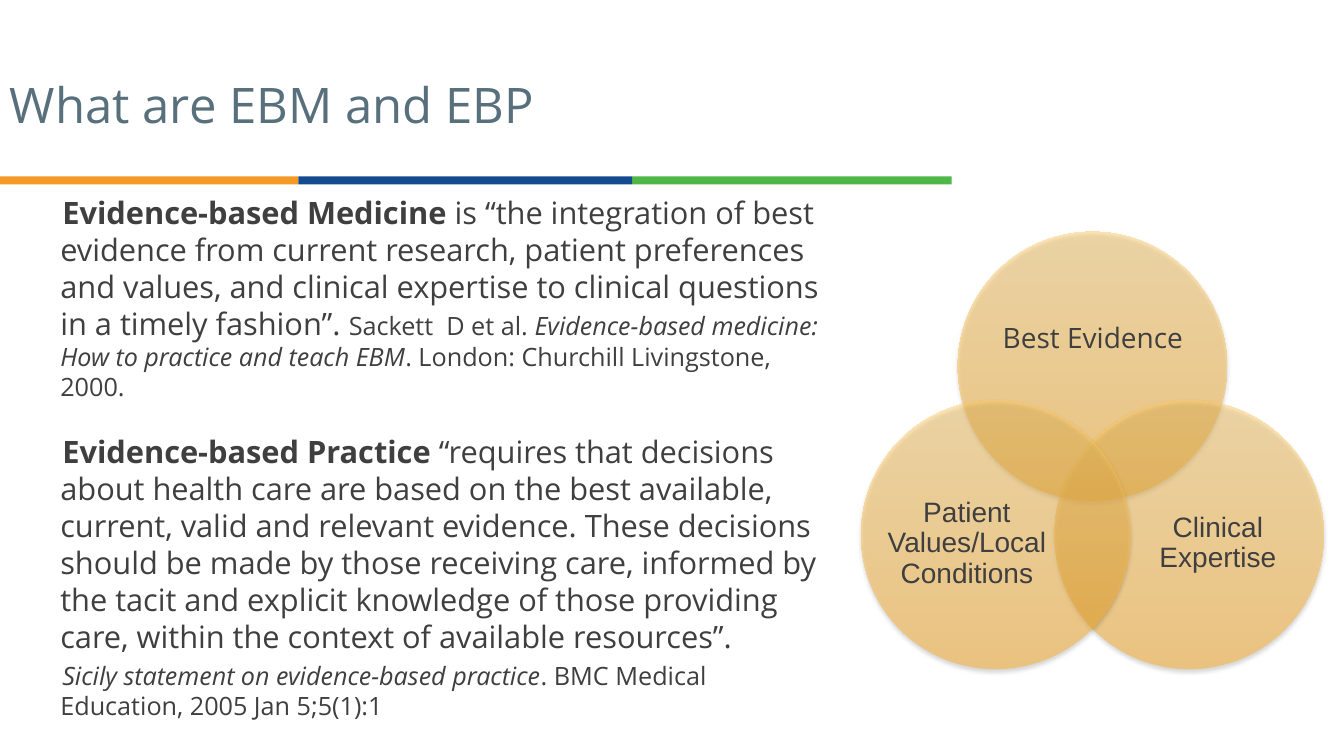
from lxml import etree
from pptx import Presentation
from pptx.dml.color import RGBColor
from pptx.enum.shapes import MSO_SHAPE
from pptx.enum.text import MSO_ANCHOR, PP_ALIGN
from pptx.oxml.ns import qn
from pptx.util import Pt

PX = 9144  # EMU per px, 100 px to the inch
RECT, OVAL = MSO_SHAPE.RECTANGLE, MSO_SHAPE.OVAL
TOP, MIDDLE = MSO_ANCHOR.TOP, MSO_ANCHOR.MIDDLE
LEFT, CENTER = PP_ALIGN.LEFT, PP_ALIGN.CENTER


def color(hex_code):
    return RGBColor.from_string(hex_code)


def add_run(paragraph, text, font, size, ink, bold=False, italic=False):
    run = paragraph.add_run()
    run.text = text
    run.font.name = font
    run.font.size = Pt(size)
    run.font.bold = bold
    run.font.italic = italic
    run.font.color.rgb = color(ink)


class EvidenceSlide:
    FONT, INK, TITLE_INK = "Open Sans", "3F3F3F", "586F7C"
    GRADIENT = ("FFAD22", "FFCE6C")
    CIRCLE_ALPHA, SHADOW_ALPHA = 47000, 33000

    def __init__(self, prs):
        self.slide = prs.slides.add_slide(prs.slide_layouts[6])

    def shape(self, kind, box):
        shape = self.slide.shapes.add_shape(kind, *(v * PX for v in box))
        shape.shadow.inherit = False
        shape.line.fill.background()
        return shape

    def bar(self, left, width, fill):
        bar = self.shape(RECT, (left, 175, width, 8))
        bar.fill.solid()
        bar.fill.fore_color.rgb = color(fill)

    def circle(self, left, top, diameter):
        circle = self.shape(OVAL, (left, top, diameter, diameter))
        circle.fill.gradient()
        circle.fill.gradient_angle = 90
        for stop, tint, position in zip(circle.fill.gradient_stops, self.GRADIENT, (0, 1)):
            stop.color.rgb = color(tint)
            stop.position = position
        properties = circle._element.spPr
        for tint in properties.iter(qn("a:srgbClr")):
            etree.SubElement(tint, qn("a:alpha"), val=str(self.CIRCLE_ALPHA))
        # Soft shadow below the circle
        shadow = etree.SubElement(
            properties.find(qn("a:effectLst")), qn("a:outerShdw"),
            blurRad=str(Pt(3.1)), dist=str(Pt(1.8)), dir="5400000", rotWithShape="0")
        black = etree.SubElement(shadow, qn("a:srgbClr"), val="000000")
        etree.SubElement(black, qn("a:alpha"), val=str(self.SHADOW_ALPHA))

    def text(self, box, paragraphs, inset=(10, 5), anchor=MIDDLE, align=LEFT,
             spacing=0.9, indent=None):
        """Each paragraph is (space before in points, [(text, format), ...])."""
        frame = self.slide.shapes.add_textbox(*(v * PX for v in box)).text_frame
        frame.word_wrap = True
        frame.vertical_anchor = anchor
        frame.margin_left = frame.margin_right = inset[0] * PX
        frame.margin_top = frame.margin_bottom = inset[1] * PX
        for i, (before, runs) in enumerate(paragraphs):
            paragraph = frame.add_paragraph() if i else frame.paragraphs[0]
            paragraph.alignment = align
            paragraph.line_spacing = spacing
            if before:
                paragraph.space_before = Pt(before)
            if indent:
                margin, first_line = indent
                layout = paragraph._p.get_or_add_pPr()
                layout.set("marL", str(margin * PX))
                layout.set("indent", str(first_line * PX))
            for words, style in runs:
                add_run(paragraph, words, **{"font": self.FONT, "ink": self.INK, **style})


BODY, BOLD = {"size": 22}, {"size": 22, "bold": True}
SOURCE, SOURCE_TITLE = {"size": 18}, {"size": 18, "italic": True}

DEFINITIONS = [
    (0, [
        ("Evidence-based Medicine", BOLD),
        (" is “the integration of best evidence from current research, patient "
         "preferences and values, and clinical expertise to clinical questions "
         "in a timely fashion”. ", BODY),
        ("Sackett  D et al. ", SOURCE),
        ("Evidence-based medicine: How to practice and teach EBM", SOURCE_TITLE),
        (". London: Churchill Livingstone, 2000.", SOURCE),
    ]),
    (22, [
        ("Evidence-based Practice", BOLD),
        (" “requires that decisions about health care are based on the best "
         "available, current, valid and relevant evidence. These decisions should "
         "be made by those receiving care, informed by the tacit and explicit "
         "knowledge of those providing care, within the context of available "
         "resources”.", BODY),
    ]),
    (4.5, [
        ("Sicily statement on evidence-based practice", SOURCE_TITLE),
        (". BMC Medical Education, 2005 Jan 5;5(1):1", SOURCE),
    ]),
]

# Circle corner, label box, label, label font
VENN = [
    ((950, 230), (986, 277, 196, 120), "Best Evidence", "Open Sans"),
    ((1046, 397), (1128, 466, 160, 147), "Clinical Expertise", "Arial"),
    ((854, 397), (879, 466, 160, 147), "Patient Values/Local Conditions", "Arial"),
]


def main():
    prs = Presentation()
    prs.slide_width, prs.slide_height = 1333 * PX, 750 * PX
    page = EvidenceSlide(prs)

    # Three-colour rule under the title
    for left, width, fill in ((627, 317, "4EB748"), (0, 296, "F49925"), (296, 331, "154A90")):
        page.bar(left, width, fill)

    # Title and definitions
    page.text((0, 48, 899, 118),
              [(0, [("What are EBM and EBP", {"size": 35, "ink": page.TITLE_INK})])])
    page.text((11, 187, 819, 495), DEFINITIONS, anchor=TOP, spacing=1.0, indent=(39, 2))

    # Venn diagram
    for corner, label_box, label, font in VENN:
        page.circle(*corner, 267)
        page.text(label_box, [(0, [(label, {"size": 20, "font": font})])],
                  inset=(0, 0), align=CENTER)

    prs.save("out.pptx")


if __name__ == "__main__":
    main()
